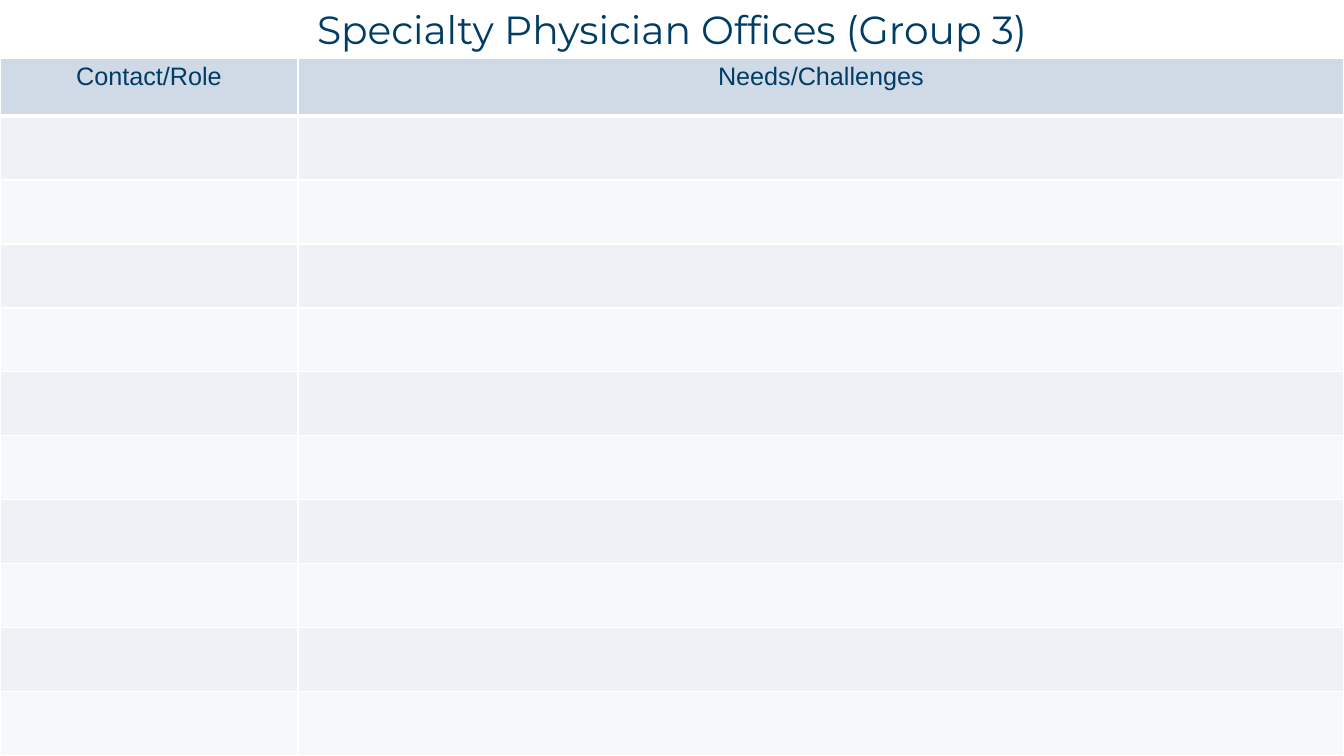
import pptx
import pptx.dml.color
import pptx.enum.text
import pptx.oxml
import pptx.oxml.ns
import pptx.util

PX = 914400 / 100.8
SLIDE_W, SLIDE_H = 1344, 756
TABLE_TOP = 58
HEADER_H = 58
BODY_ROWS = 10
ROW_H = (SLIDE_H - TABLE_TOP - HEADER_H) // BODY_ROWS
COLUMNS = {"Contact/Role": 298, "Needs/Challenges": 1046}
COLORS = {
    "navy": "003D66",
    "header": "D0DAE6",
    "odd": "EEF1F5",
    "even": "F6F8FA",
    "border": "FFFFFF",
}


def px(n):
    return pptx.util.Emu(round(n * PX))


def rgb(name):
    return pptx.dml.color.RGBColor.from_string(COLORS[name])


def write_centered(p, text, font, size):
    p.text = text
    p.alignment = pptx.enum.text.PP_ALIGN.CENTER
    p.font.name = font
    p.font.size = pptx.util.Pt(size)
    p.font.bold = False
    p.font.color.rgb = rgb("navy")


def add_title(s, text, x, y, w, h):
    tf = s.shapes.add_textbox(px(x), px(y), px(w), px(h)).text_frame
    tf.word_wrap = True
    write_centered(tf.paragraphs[0], text, "Montserrat", 28)


def style_cell(cell, fill, bottom=1):
    """Fill a cell and draw its borders, with the bottom width in points."""
    tc_pr = cell._tc.get_or_add_tcPr()
    for side, width in (("L", 1), ("R", 1), ("T", 1), ("B", bottom)):
        tc_pr.append(pptx.oxml.parse_xml(
            f'<a:ln{side} {pptx.oxml.ns.nsdecls("a")} w="{pptx.util.Pt(width)}">'
            f'<a:solidFill><a:srgbClr val="{COLORS["border"]}"/></a:solidFill>'
            f'</a:ln{side}>'))
    cell.fill.solid()
    cell.fill.fore_color.rgb = rgb(fill)


def add_needs_table(s):
    table = s.shapes.add_table(
        BODY_ROWS + 1, len(COLUMNS), px(0), px(TABLE_TOP),
        px(SLIDE_W), px(SLIDE_H - TABLE_TOP)).table
    for i, row in enumerate(table.rows):
        row.height = px(ROW_H if i else HEADER_H)
    for j, (heading, width) in enumerate(COLUMNS.items()):
        table.columns[j].width = px(width)
        header = table.cell(0, j)
        write_centered(header.text_frame.paragraphs[0], heading, "Arial", 18)
        style_cell(header, "header", bottom=3)
        for i in range(1, BODY_ROWS + 1):
            # The first body row shares its top edge with the thick header line.
            style_cell(table.cell(i, j), "odd" if i % 2 else "even")
    for cell in table.rows[1].cells:
        top = cell._tc.tcPr.find(pptx.oxml.ns.qn("a:lnT"))
        top.set("w", str(pptx.util.Pt(3)))


def main():
    prs = pptx.Presentation()
    prs.slide_width, prs.slide_height = px(SLIDE_W), px(SLIDE_H)
    s = prs.slides.add_slide(prs.slide_layouts[6])
    add_title(s, "Specialty Physician Offices (Group 3)", 252, 0, 840, 89)
    add_needs_table(s)
    prs.save("out.pptx")


if __name__ == "__main__":
    main()
